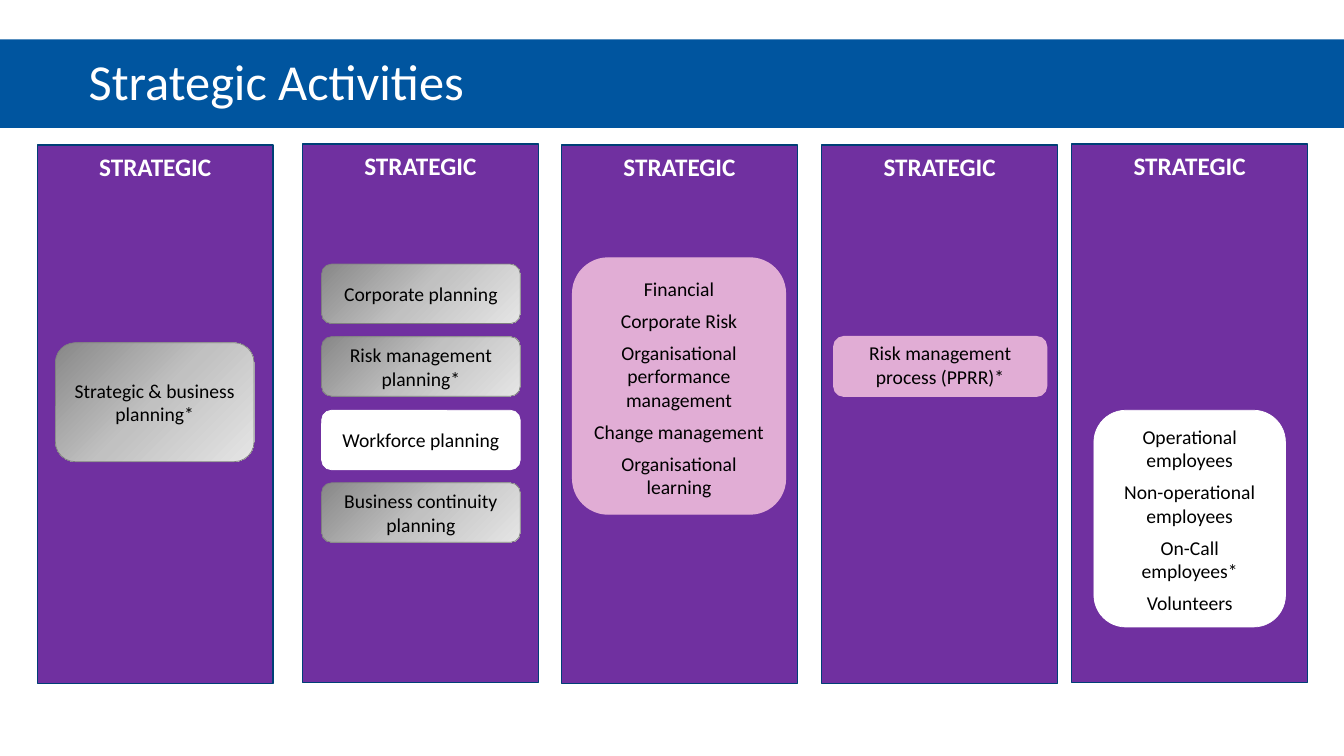
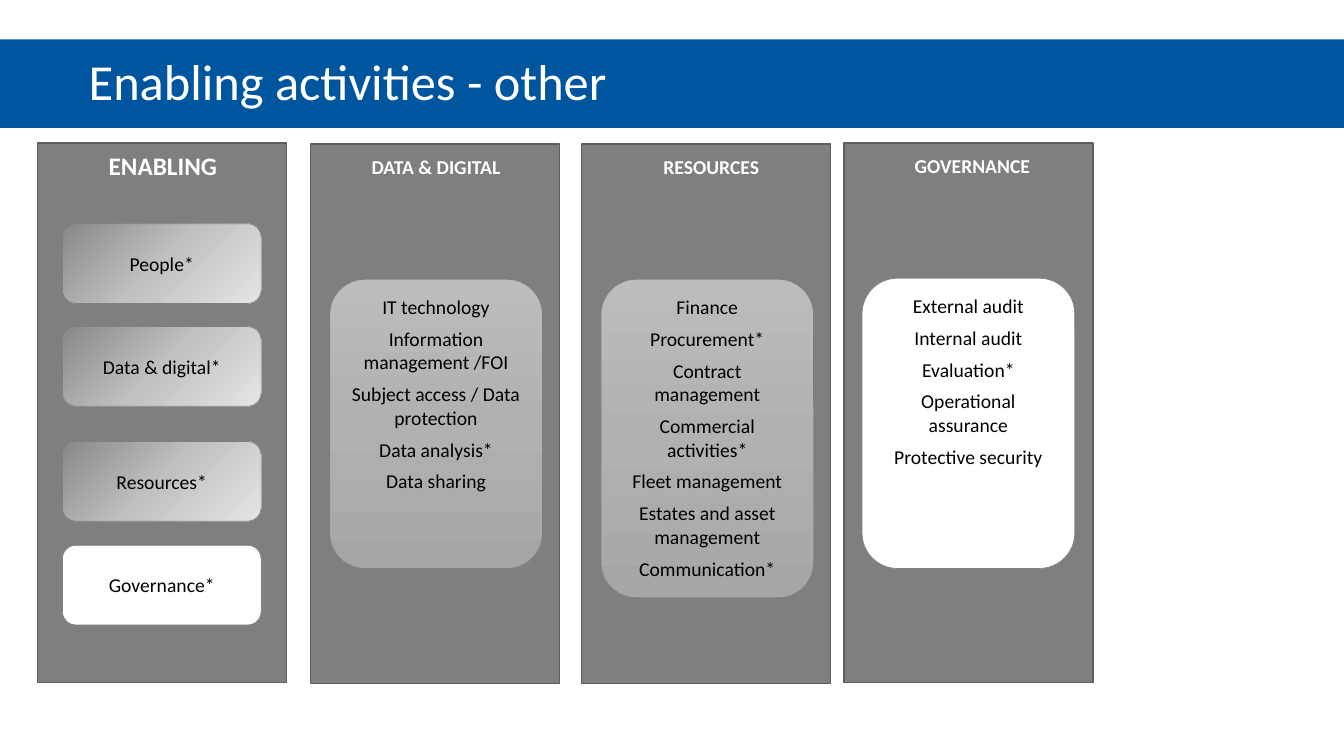
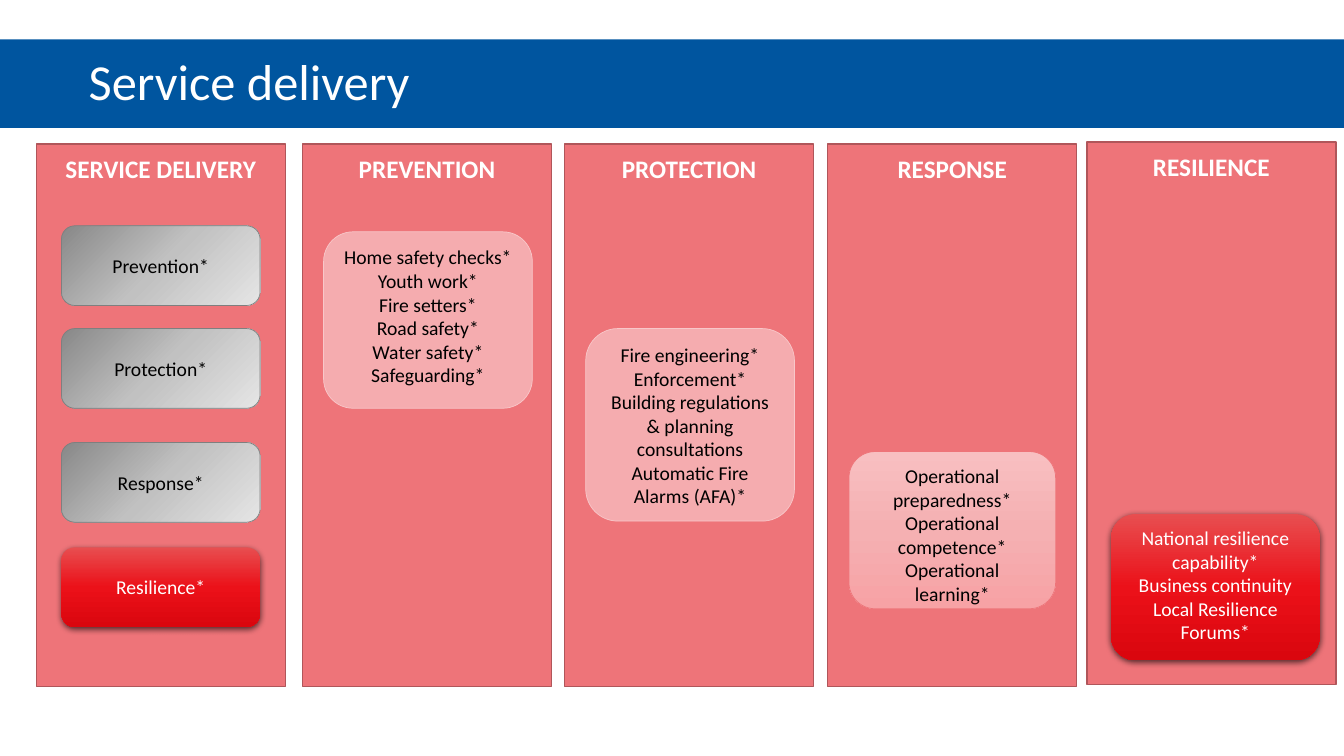
from copy import deepcopy
from pptx import Presentation
from pptx.dml.color import RGBColor
from pptx.enum.shapes import MSO_SHAPE as Shape
from pptx.enum.text import MSO_ANCHOR as Anchor, PP_ALIGN as Align
from pptx.oxml.ns import qn
from pptx.util import Inches, Pt
from lxml.etree import SubElement

# Shared look
FONT = "Calibri"
BLUE, WHITE, BLACK = "00559F", "FFFFFF", "000000"
PURPLE, GREY, CORAL = ("7030A0", "003F76"), ("7F7F7F", "5E5E5E"), ("EE7479", "B0565A")

# Card styles: fill (three colours and an angle make a gradient), line, line width
STYLES = {
    "steel": (("888888", "C1C1C1", "E5E5E5", 45), "7F7F7F", 0.5),
    "slate": (("BCBCBC", "B1B1B1", "A6A6A6", 90), "7F7F7F", 0.5),
    "white": (WHITE, WHITE, 0.5),
    "edged": (WHITE, "808284", 0.5),
    "pink": ("E1ADD5", "E1ADD5", 1),
    "rose": ("F5ACAF", "F8C7C9", 0.5),
    "blush": (("F8BFC1", "F5B0B2", "F7A2A5", 90), "EE7479", 0.5),
    "red": (("E84E50", "EB1119", "DA060E", 90), None, 0),
}


def color(code):
    return RGBColor.from_string(code)


def blend(fill, codes, angle):
    """Three-stop linear gradient, angle measured clockwise."""
    fill.gradient()
    fill.gradient_angle = 360 - angle
    first = fill.gradient_stops[0]._gs
    first.addnext(deepcopy(first))
    for stop, spot, code in zip(fill.gradient_stops, (0, 0.5, 1), codes):
        stop.position = spot
        stop.color.rgb = color(code)


def shade(shape):
    """Soft shadow straight below the shape."""
    effects = shape._element.spPr.find(qn("a:effectLst"))
    outer = SubElement(effects, qn("a:outerShdw"), blurRad=str(Pt(4.5)),
                       dist=str(Pt(1.5)), dir="5400000", rotWithShape="0")
    tint = SubElement(outer, qn("a:srgbClr"), val=BLACK)
    SubElement(tint, qn("a:alpha"), val="63000")


def block(slide, kind, place, fill, line=None, width=1):
    shape = slide.shapes.add_shape(kind, *map(Inches, place))
    shape.shadow.inherit = False
    if isinstance(fill, tuple):
        blend(shape.fill, fill[:3], fill[3])
    else:
        shape.fill.solid()
        shape.fill.fore_color.rgb = color(fill)
    if line:
        shape.line.color.rgb = color(line)
        shape.line.width = Pt(width)
    else:
        shape.line.fill.background()
    return shape


def write(shape, text, size, ink, bold=False, align=Align.CENTER,
          anchor=Anchor.MIDDLE, after=0):
    frame = shape.text_frame
    frame.word_wrap = True
    frame.vertical_anchor = anchor
    frame.text = text
    for para in frame.paragraphs:
        para.alignment = align
        para.space_after = Pt(after)
        for run in para.runs:
            font = run.font
            font.name, font.size, font.bold = FONT, Pt(size), bold
            font.color.rgb = color(ink)
    return frame


def page(deck, title):
    """Blank slide with the blue title band."""
    slide = deck.slides.add_slide(deck.slide_layouts[6])
    band = block(slide, Shape.RECTANGLE, (0, 0.39, 13.33, 0.88), BLUE)
    frame = write(band, title, 36, WHITE, align=Align.LEFT)
    frame.margin_left = Inches(0.88)
    frame.paragraphs[0].line_spacing = 0.9
    return slide


def column(slide, theme, place, head, size=18, drop=0.01, shift=0):
    """Tall panel with a bold heading; drop and shift move the heading."""
    left, top, wide, _ = place
    block(slide, Shape.RECTANGLE, place, *theme)
    label = slide.shapes.add_textbox(
        *map(Inches, (left + shift, top + drop, wide, 0.4)))
    write(label, head, size, WHITE, bold=True)


def card(slide, style, place, text, **layout):
    shape = block(slide, Shape.ROUNDED_RECTANGLE, place, *STYLES[style])
    if style == "red":
        shade(shape)
    write(shape, text, 14, WHITE if style == "red" else BLACK, **layout)


def roster(slide, style, place, items, after=0, anchor=Anchor.TOP):
    """Card holding one paragraph per item."""
    card(slide, style, place, "\n".join(items), after=after, anchor=anchor)


def stack(slide, left, high, rows):
    """Cards of one size below each other."""
    for top, style, text in rows:
        card(slide, style, (left, top, 1.97, high), text)


def plans(deck):
    slide = page(deck, "Strategic Activities")
    for left, top in ((0.37, 1.44), (3, 1.43), (5.57, 1.44), (8.15, 1.44), (10.63, 1.43)):
        column(slide, PURPLE, (left, top, 2.34, 5.34), "STRATEGIC")
    stack(slide, 0.55, 1.18, [(3.4, "steel", "Strategic & business planning*")])
    stack(slide, 3.19, 0.59, [
        (2.62, "steel", "Corporate planning"),
        (3.34, "steel", "Risk management planning*"),
        (4.07, "white", "Workforce planning"),
        (4.79, "steel", "Business continuity planning")])
    roster(slide, "pink", (5.68, 2.56, 2.11, 2.54), [
        "Financial", "Corporate Risk", "Organisational performance management",
        "Change management", "Organisational learning"], 6, Anchor.BOTTOM)
    roster(slide, "pink", (8.27, 3.34, 2.11, 0.59),
           ["Risk management process (PPRR)*"], 6, Anchor.BOTTOM)
    roster(slide, "white", (10.85, 4.07, 1.9, 2.15), [
        "Operational employees", "Non-operational employees",
        "On-Call employees*", "Volunteers"], 6)


def support(deck):
    slide = page(deck, "Enabling activities - other")
    for left, top, head, size, shift in (
            (0.37, 1.42, "ENABLING", 18, 0.01),
            (3.08, 1.43, "DATA & DIGITAL", 14, 0.01),
            (5.77, 1.43, "RESOURCES", 14, 0.05),
            (8.37, 1.42, "GOVERNANCE", 14, 0.04)):
        column(slide, GREY, (left, top, 2.47, 5.35), head, size, 0.02, shift)
    stack(slide, 0.62, 0.79, [
        (2.22, "steel", "People*"), (3.24, "steel", "Data & digital*"),
        (4.38, "steel", "Resources*"), (5.41, "edged", "Governance*")])
    roster(slide, "slate", (3.27, 2.77, 2.11, 2.87), [
        "IT technology", "Information management /FOI",
        "Subject access / Data protection", "Data analysis*", "Data sharing"], 6)
    roster(slide, "slate", (5.96, 2.77, 2.11, 3.16), [
        "Finance", "Procurement*", "Contract management", "Commercial activities*",
        "Fleet management", "Estates and asset management", "Communication*"], 6)
    roster(slide, "edged", (8.55, 2.76, 2.11, 2.88), [
        "External audit", "Internal audit", "Evaluation*",
        "Operational assurance", "Protective security"], 6)


def service(deck):
    slide = page(deck, "Service delivery")
    for left, top, head in (
            (0.36, 1.43, "SERVICE DELIVERY"), (3, 1.43, "PREVENTION"),
            (5.6, 1.43, "PROTECTION"), (8.21, 1.43, "RESPONSE"),
            (10.78, 1.41, "RESILIENCE")):
        column(slide, CORAL, (left, top, 2.47, 5.38), head, drop=0.04)
    stack(slide, 0.61, 0.79, [
        (2.24, "steel", "Prevention*"), (3.26, "steel", "Protection*"),
        (4.39, "steel", "Response*"), (5.43, "red", "Resilience*")])
    roster(slide, "rose", (3.21, 2.3, 2.07, 1.75), [
        "Home safety checks*", "Youth work*", "Fire setters*",
        "Road safety*", "Water safety*", "Safeguarding*"])
    roster(slide, "rose", (5.81, 3.26, 2.07, 1.91), [
        "Fire engineering*", "Enforcement*",
        "Building regulations & planning consultations",
        "Automatic Fire Alarms (AFA)*"])
    roster(slide, "blush", (8.42, 4.48, 2.05, 1.56), [
        "Operational preparedness*", "Operational competence*",
        "Operational learning*"])
    roster(slide, "red", (11.02, 5.1, 2.07, 1.45), [
        "National resilience capability*", "Business continuity",
        "Local Resilience Forums*"])


def main():
    deck = Presentation()
    deck.slide_width, deck.slide_height = Inches(13.33), Inches(7.5)
    plans(deck)
    support(deck)
    service(deck)
    deck.save("out.pptx")


if __name__ == "__main__":
    main()
